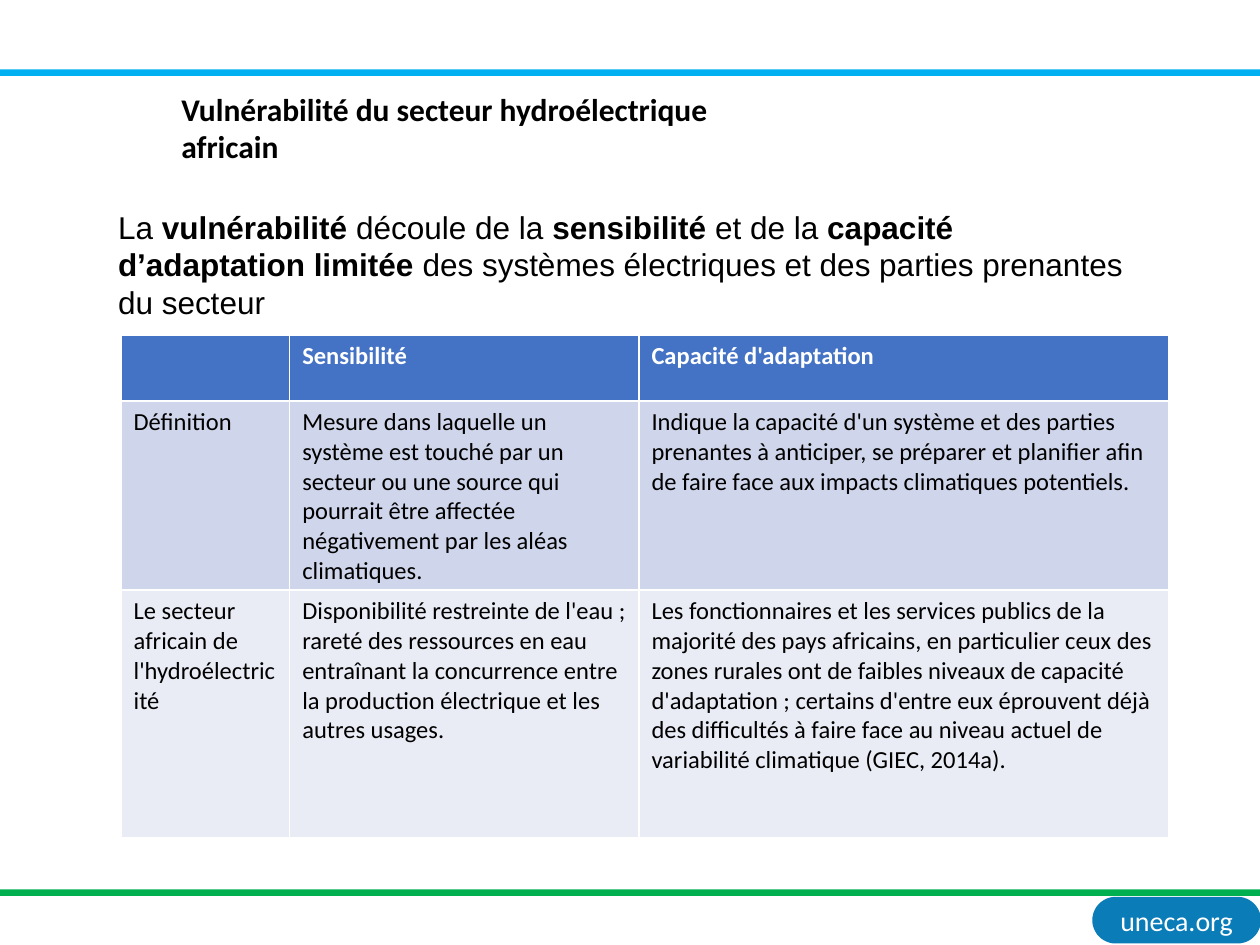
from pptx import Presentation
from pptx.dml.color import RGBColor
from pptx.enum.shapes import MSO_SHAPE
from pptx.enum.text import MSO_ANCHOR, PP_ALIGN
from pptx.util import Cm, Pt

RECTANGLE = MSO_SHAPE.RECTANGLE
ROUNDED = MSO_SHAPE.ROUNDED_RECTANGLE
TOP, MIDDLE = MSO_ANCHOR.TOP, MSO_ANCHOR.MIDDLE
LEFT, CENTER = PP_ALIGN.LEFT, PP_ALIGN.CENTER
TITLE_ONLY = 5


def add_run(paragraph, text, size, color, font="Calibri", bold=False):
    run = paragraph.add_run()
    run.text = text
    for name, value in {"name": font, "size": Pt(size), "bold": bold}.items():
        setattr(run.font, name, value)
    run.font.color.rgb = RGBColor.from_string(color)


def add_block(kind, left, top, width, height, color):
    """Add a plain filled shape without line or shadow."""
    shape = slide.shapes.add_shape(kind, Cm(left), Cm(top), Cm(width), Cm(height))
    shape.shadow.inherit = False
    shape.fill.solid()
    shape.fill.fore_color.rgb = RGBColor.from_string(color)
    shape.line.fill.background()
    return shape


presentation = Presentation()
presentation.slide_width, presentation.slide_height = Cm(25.4), Cm(19.05)
slide = presentation.slides.add_slide(presentation.slide_layouts[TITLE_ONLY])

# Frame of the page
badge = add_block(ROUNDED, 22.02, 18.08, 3.4, 0.94, "0A7CB8")
badge.adjustments[0] = 0.5
margins = ("margin_left", "margin_right", "margin_top", "margin_bottom")
for margin in margins:
    setattr(badge.text_frame, margin, Cm(0.13))
badge.text_frame.vertical_anchor = MIDDLE
badge_paragraph = badge.text_frame.paragraphs[0]
badge_paragraph.alignment = CENTER
add_run(badge_paragraph, "uneca.org", 16, "FFFFFF")
for top, color in ((1.4, "00B0F0"), (17.93, "00B050")):
    add_block(RECTANGLE, 0, top, 25.4, 0.13, color)

# Title
title = slide.shapes.title
title.left, title.top, title.width, title.height = Cm(3.4), Cm(1.68), Cm(12.95), Cm(1.02)
title.text_frame.word_wrap = True
title.text_frame.vertical_anchor = TOP
title_paragraph = title.text_frame.paragraphs[0]
title_paragraph.alignment = LEFT
add_run(title_paragraph, "Vulnérabilité du secteur hydroélectrique africain", 18, "000000", bold=True)

# Introduction
introduction = slide.shapes.add_textbox(Cm(2.13), Cm(4.06), Cm(21.13), Cm(1.8))
introduction.text_frame.word_wrap = True
phrases = (
    ("La ", False),
    ("vulnérabilité", True),
    (" découle de la ", False),
    ("sensibilité", True),
    (" et de la ", False),
    ("capacité d’adaptation limitée", True),
    (" des systèmes électriques et des parties prenantes du secteur", False),
)
for text, bold in phrases:
    add_run(introduction.text_frame.paragraphs[0], text, 18, "000000", "Arial", bold)

# Table: each cell is a list of paragraphs
rows = (
    ([], ["Sensibilité"], ["Capacité d'adaptation"]),
    (
        ["Définition"],
        ["Mesure dans laquelle un système est touché par un secteur ou une source qui "
         "pourrait être affectée négativement par les aléas climatiques."],
        ["Indique la capacité d'un système et des parties prenantes à anticiper, se "
         "préparer et planifier afin de faire face aux impacts climatiques potentiels."],
    ),
    (
        ["Le secteur africain de l'hydroélectricité"],
        ["Disponibilité restreinte de l'eau ; rareté des ressources en eau entraînant la "
         "concurrence entre la production électrique et les autres usages."],
        ["Les fonctionnaires et les services publics de la majorité des pays africains, en "
         "particulier ceux des zones rurales ont de faibles niveaux de capacité "
         "d'adaptation ; certains d'entre eux éprouvent déjà",
         "des difficultés à faire face au niveau actuel de variabilité climatique "
         "(GIEC, 2014a)."],
    ),
)
column_widths = (3.4, 7.04, 10.69)
row_formats = (  # height, fill, text colour, bold
    (1.32, "4472C4", "FFFFFF", True),
    (3.81, "CFD5EA", "000000", False),
    (5.0, "E9EBF5", "000000", False),
)
table = slide.shapes.add_table(
    len(rows), len(column_widths), Cm(2.44), Cm(6.76),
    Cm(sum(column_widths)), Cm(sum(row_format[0] for row_format in row_formats)),
).table
for column, width in zip(table.columns, column_widths):
    column.width = Cm(width)
for row, contents, (height, fill, color, bold) in zip(table.rows, rows, row_formats):
    row.height = Cm(height)
    for cell, texts in zip(row.cells, contents):
        cell.fill.solid()
        cell.fill.fore_color.rgb = RGBColor.from_string(fill)
        for index, text in enumerate(texts):
            frame = cell.text_frame
            paragraph = frame.add_paragraph() if index else frame.paragraphs[0]
            add_run(paragraph, text, 14, color, bold=bold)

presentation.save("out.pptx")
